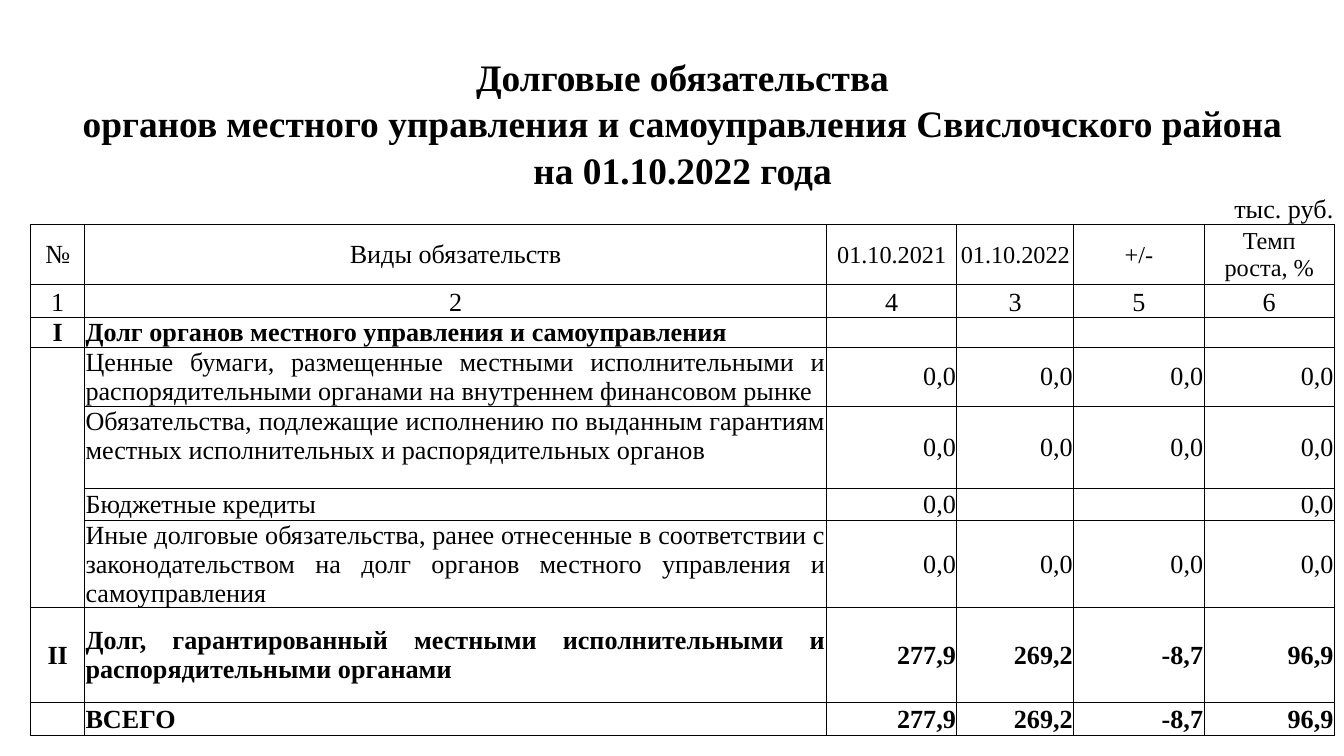
from lxml import etree
from pptx import Presentation
from pptx.dml.color import RGBColor
from pptx.enum import text
from pptx.oxml import ns
from pptx.util import Inches, Pt

FONT = "Times New Roman"
BLACK = RGBColor(0, 0, 0)
WHITE = RGBColor(255, 255, 255)
ALIGN = text.PP_ALIGN
ANCHOR = text.MSO_ANCHOR

TABLE_BOX = (0.23, 0.39, 9.71)
COLUMN_WIDTHS = [0.4, 5.52, 0.97, 0.87, 0.97, 0.97]
TITLES = [
    "Долговые обязательства",
    "органов местного управления и самоуправления Свислочского района",
    "на 01.10.2022 года",
]
UNIT = "тыс. руб."
HEADINGS = ["№", "Виды обязательств", "01.10.2021", "01.10.2022", "+/-", "Темп\nроста, %"]
NUMBERS = ["1", "2", "4", "3", "5", "6"]
ZEROS = ["0,0"] * 4
TOTALS = ["277,9", "269,2", "-8,7", "96,9"]
DEBTS = [
    (0.22, "I", "Долг органов местного управления и самоуправления", [""] * 4),
    (0.44, "", "Ценные бумаги, размещенные местными исполнительными и "
     "распорядительными органами на внутреннем финансовом рынке", ZEROS),
    (0.61, "", "Обязательства, подлежащие исполнению по выданным гарантиям "
     "местных исполнительных и распорядительных органов", ZEROS),
    (0.24, "", "Бюджетные кредиты", ["0,0", "", "", "0,0"]),
    (0.65, "", "Иные долговые обязательства, ранее отнесенные в соответствии с "
     "законодательством на долг органов местного управления и самоуправления", ZEROS),
    (0.7, "II", "Долг, гарантированный местными исполнительными и "
     "распорядительными органами", TOTALS),
    (0.25, "", "ВСЕГО", TOTALS),
]
ROW_HEIGHTS = [0.35, 0.34, 0.35, 0.24, 0.45, 0.24] + [debt[0] for debt in DEBTS]
FIRST_DEBT_ROW = 6
OPEN_SIDES = {7: "LRT", 8: "LR", 9: "LR", 10: "LRB"}


def set_borders(cell, sides):
    """Draw thin black lines on the given sides and clear the others."""
    properties = cell._tc.get_or_add_tcPr()
    for side in "LRTB":
        line = etree.SubElement(properties, ns.qn(f"a:ln{side}"), w=str(Pt(0.5)))
        if side in sides:
            fill = etree.SubElement(line, ns.qn("a:solidFill"))
            etree.SubElement(fill, ns.qn("a:srgbClr"), val=str(BLACK))
        else:
            etree.SubElement(line, ns.qn("a:noFill"))


def fill_cell(cell, content, align, size=14, bold=False, anchor=ANCHOR.MIDDLE,
              sides="LRTB", color=None):
    """Write and format one table cell."""
    set_borders(cell, sides)
    if color is None:
        cell.fill.background()
    else:
        cell.fill.solid()
        cell.fill.fore_color.rgb = color
    cell.margin_left = cell.margin_right = cell.margin_top = Pt(0.5)
    cell.margin_bottom = 0
    cell.vertical_anchor = anchor
    frame = cell.text_frame
    for index, words in enumerate(content.split("\n")):
        paragraph = frame.add_paragraph() if index else frame.paragraphs[0]
        paragraph.alignment = align
        if words:
            run = paragraph.add_run()
            run.text = words
            run.font.name = FONT
            run.font.size = Pt(size)
            run.font.bold = bold
            run.font.color.rgb = BLACK
        else:
            ending = etree.SubElement(paragraph._p, ns.qn("a:endParaRPr"), sz=str(size * 100))
            etree.SubElement(ending, ns.qn("a:latin"), typeface=FONT)


def add_title_rows(table):
    """Fill the merged title rows and the unit row."""
    for row, words in enumerate(TITLES + [UNIT]):
        is_unit = words == UNIT
        for column in range(len(COLUMN_WIDTHS)):
            fill_cell(table.cell(row, column), "" if column else words,
                      ALIGN.RIGHT if is_unit else ALIGN.CENTER,
                      size=14 if is_unit else 20, bold=not is_unit,
                      anchor=ANCHOR.BOTTOM, sides="B" if is_unit else "",
                      color=WHITE if row == 2 else None)
        table.cell(row, 0).merge(table.cell(row, len(COLUMN_WIDTHS) - 1))


def add_heading_rows(table):
    """Fill the column headings and the column numbers."""
    for column, (heading, number) in enumerate(zip(HEADINGS, NUMBERS)):
        fill_cell(table.cell(4, column), heading, ALIGN.CENTER,
                  size=14 if column < 2 else 13)
        fill_cell(table.cell(5, column), number, ALIGN.CENTER, anchor=ANCHOR.BOTTOM)


def add_debt_rows(table):
    """Fill the debt rows and the total."""
    for row, (_, number, name, values) in enumerate(DEBTS, FIRST_DEBT_ROW):
        bold = bool(number) or name == "ВСЕГО"
        fill_cell(table.cell(row, 0), number, ALIGN.CENTER, bold=bold,
                  sides=OPEN_SIDES.get(row, "LRTB"))
        fill_cell(table.cell(row, 1), name,
                  ALIGN.LEFT if name == "ВСЕГО" else ALIGN.JUSTIFY, bold=bold,
                  anchor=ANCHOR.TOP if row == 8 else ANCHOR.MIDDLE)
        for column, value in enumerate(values, 2):
            fill_cell(table.cell(row, column), value, ALIGN.RIGHT, bold=bold, color=WHITE)


def add_debt_table(slide, left, top, width):
    """Add the debt table at the given place."""
    shape = slide.shapes.add_table(len(ROW_HEIGHTS), len(COLUMN_WIDTHS), Inches(left),
                                   Inches(top), Inches(width), Inches(sum(ROW_HEIGHTS)))
    table = shape.table
    table.first_row = table.horz_banding = False
    for column, column_width in zip(table.columns, COLUMN_WIDTHS):
        column.width = Inches(column_width)
    for row, height in zip(table.rows, ROW_HEIGHTS):
        row.height = Inches(height)
    add_title_rows(table)
    add_heading_rows(table)
    add_debt_rows(table)


def main():
    """Build and save the presentation."""
    presentation = Presentation()
    presentation.slide_width = Inches(10)
    presentation.slide_height = Inches(10 * 9 / 16)
    slide = presentation.slides.add_slide(presentation.slide_layouts[6])
    add_debt_table(slide, *TABLE_BOX)
    presentation.save("out.pptx")


if __name__ == "__main__":
    main()
